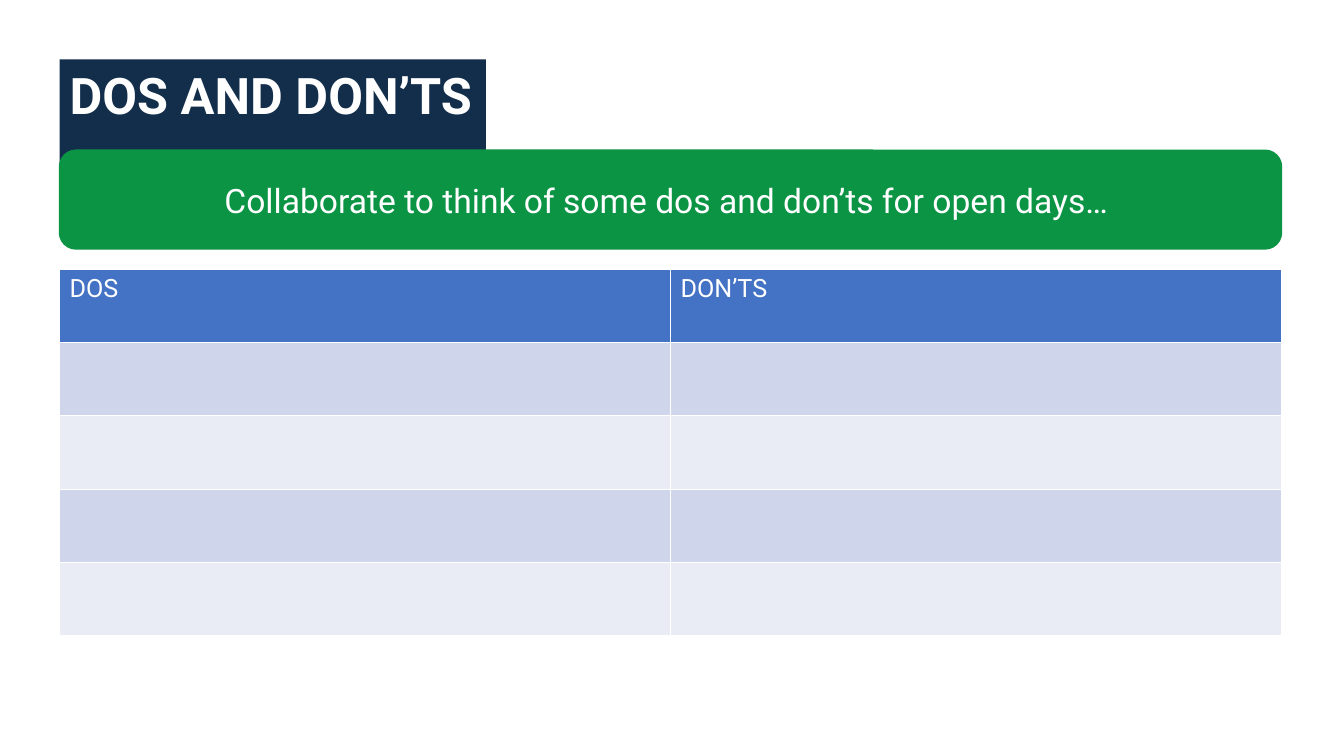
"""Build the open days slide: a title, a prompt banner and an empty dos and don'ts table."""
import pptx
import pptx.util
import pptx.dml.color
import pptx.enum.shapes
import pptx.enum.text

TITLE = "DOS AND DON’TS"
PROMPT = "Collaborate to think of some dos and don’ts for open days… "
HEADINGS = ["DOS", "DON’TS"]
IDEA_ROWS = 4

COLOURS = {
    "navy": "132E4B",
    "green": "0B9444",
    "header": "4472C4",
    "dark_band": "CFD5EA",
    "light_band": "E9EBF5",
    "white": "FFFFFF",
}
FORMATS = {
    "title": {"size": pptx.util.Pt(36), "bold": True},
    "prompt": {"size": pptx.util.Pt(24), "bold": False},
    "heading": {"size": pptx.util.Pt(18), "bold": False},
}

SLIDE_WIDTH, SLIDE_HEIGHT = 13.33, 7.5
MARGIN = 0.59
GAP = 0.19
CONTENT_WIDTH = 12.12
TITLE_WIDTH, TITLE_HEIGHT = 4.23, 0.71
BANNER_HEIGHT = 0.98
TABLE_HEIGHT = 3.64
BANNER_TOP = MARGIN + TITLE_HEIGHT + GAP
TABLE_TOP = BANNER_TOP + BANNER_HEIGHT + GAP + 0.01


def inches(*lengths):
    return [pptx.util.Inches(length) for length in lengths]


def colour(name):
    return pptx.dml.color.RGBColor.from_string(COLOURS[name])


def paint(target, name):
    target.fill.solid()
    target.fill.fore_color.rgb = colour(name)


def write(frame, text, style, alignment):
    frame.text = text
    paragraph = frame.paragraphs[0]
    paragraph.alignment = alignment
    font = paragraph.runs[0].font
    for attribute, value in {"name": "Roboto", **FORMATS[style]}.items():
        setattr(font, attribute, value)
    font.color.rgb = colour("white")


def main():
    deck = pptx.Presentation()
    deck.slide_width, deck.slide_height = inches(SLIDE_WIDTH, SLIDE_HEIGHT)
    slide = deck.slides.add_slide(deck.slide_layouts[5])
    left = pptx.enum.text.PP_ALIGN.LEFT
    centre = pptx.enum.text.PP_ALIGN.CENTER

    title = slide.shapes.title
    title.left, title.top, title.width, title.height = inches(
        MARGIN, MARGIN, TITLE_WIDTH, TITLE_HEIGHT)
    paint(title, "navy")
    title.text_frame.auto_size = pptx.enum.text.MSO_AUTO_SIZE.SHAPE_TO_FIT_TEXT
    title.text_frame.vertical_anchor = pptx.enum.text.MSO_ANCHOR.TOP
    write(title.text_frame, TITLE, "title", left)

    ideas = slide.shapes.add_table(
        IDEA_ROWS + 1, len(HEADINGS),
        *inches(MARGIN, TABLE_TOP, CONTENT_WIDTH, TABLE_HEIGHT)).table
    for column, heading in enumerate(HEADINGS):
        write(ideas.cell(0, column).text_frame, heading, "heading", left)
        paint(ideas.cell(0, column), "header")
        for row in range(1, IDEA_ROWS + 1):
            paint(ideas.cell(row, column), "dark_band" if row % 2 else "light_band")

    banner = slide.shapes.add_shape(
        pptx.enum.shapes.MSO_SHAPE.ROUNDED_RECTANGLE,
        *inches(MARGIN, BANNER_TOP, CONTENT_WIDTH, BANNER_HEIGHT))
    banner.shadow.inherit = False
    paint(banner, "green")
    banner.line.color.rgb = colour("green")
    banner.line.width = pptx.util.Pt(1)
    banner.text_frame.vertical_anchor = pptx.enum.text.MSO_ANCHOR.MIDDLE
    write(banner.text_frame, PROMPT, "prompt", centre)

    deck.save("out.pptx")


if __name__ == "__main__":
    main()
